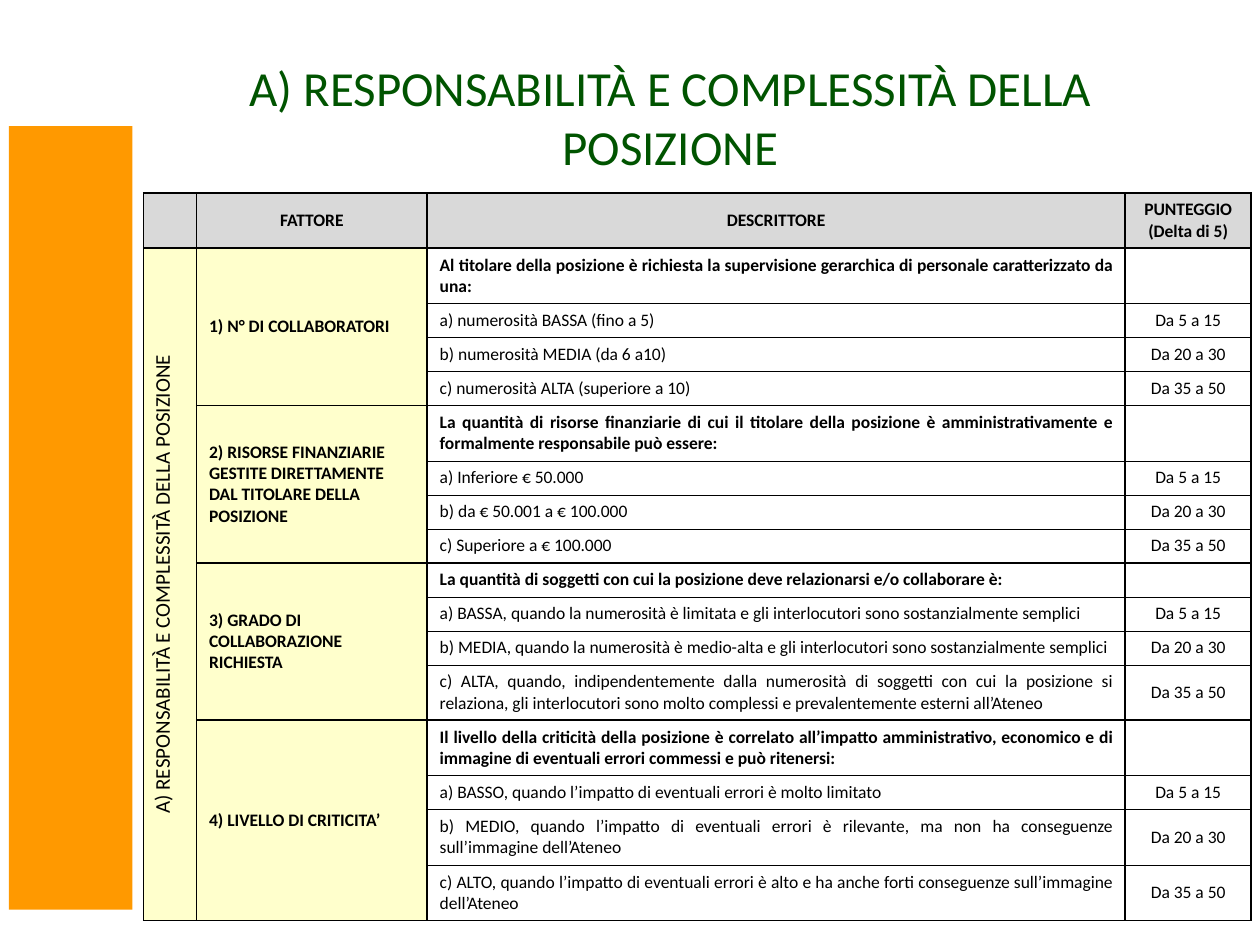
from lxml.etree import SubElement
from pptx import Presentation
from pptx.dml.color import RGBColor
from pptx.enum.shapes import MSO_SHAPE
from pptx.enum.text import MSO_ANCHOR, PP_ALIGN
from pptx.oxml import parse_xml
from pptx.oxml.ns import nsdecls, qn
from pptx.util import Inches, Pt

ORANGE = RGBColor(0xFF, 0x99, 0x00)
GREEN = RGBColor(0x00, 0x54, 0x00)
BLACK = RGBColor(0x00, 0x00, 0x00)
GREY = RGBColor(0xD9, 0xD9, 0xD9)
CREAM = RGBColor(0xFF, 0xFF, 0xCC)

TITLE = "A) RESPONSABILITÀ E COMPLESSITÀ DELLA POSIZIONE"
HEADS = ["", "FATTORE", "DESCRITTORE", "PUNTEGGIO\n(Delta di 5)"]
SCORES = ["", "Da 5 a 15", "Da 20 a 30", "Da 35 a 50"]
# Each factor: name, then its question and three levels
FACTORS = [
    ("1) N° DI COLLABORATORI", [
        "Al titolare della posizione è richiesta la supervisione gerarchica "
        "di personale caratterizzato da una:",
        "a) numerosità BASSA (fino a 5)",
        "b) numerosità MEDIA (da 6 a10)",
        "c) numerosità ALTA (superiore a 10)"]),
    ("2) RISORSE FINANZIARIE GESTITE DIRETTAMENTE DAL TITOLARE DELLA POSIZIONE", [
        "La quantità di risorse finanziarie di cui il titolare della posizione "
        "è amministrativamente e formalmente responsabile può essere:",
        "a) Inferiore € 50.000",
        "b) da € 50.001 a € 100.000",
        "c) Superiore a € 100.000"]),
    ("3) GRADO DI COLLABORAZIONE RICHIESTA", [
        "La quantità di soggetti con cui la posizione deve relazionarsi "
        "e/o collaborare è:",
        "a) BASSA, quando la numerosità è limitata e gli interlocutori sono "
        "sostanzialmente semplici",
        "b) MEDIA, quando la numerosità è medio-alta e gli interlocutori sono "
        "sostanzialmente semplici",
        "c) ALTA, quando, indipendentemente dalla numerosità di soggetti con cui "
        "la posizione si relaziona, gli interlocutori sono molto complessi e "
        "prevalentemente esterni all’Ateneo"]),
    ("4) LIVELLO DI CRITICITA’", [
        "Il livello della criticità della posizione è correlato all’impatto "
        "amministrativo, economico e di immagine di eventuali errori commessi "
        "e può ritenersi:",
        "a) BASSO, quando l’impatto di eventuali errori è molto limitato",
        "b) MEDIO, quando l’impatto di eventuali errori è rilevante, ma non ha "
        "conseguenze sull’immagine dell’Ateneo",
        "c) ALTO, quando l’impatto di eventuali errori è alto e ha anche forti "
        "conseguenze sull’immagine dell’Ateneo"]),
]
WIDTHS = [0.42, 1.83, 5.54, 1]
LOW, HIGH = 0.27, 0.44  # rows of one and of two lines
ONE_LINE = 94  # most letters that fit one line of a description


class Deck:
    font = "Calibri"

    def __init__(self, slide):
        self.slide = slide

    def text(self, frame, text, size, color=BLACK, bold=False, align=PP_ALIGN.LEFT):
        frame.text = text
        for par in frame.paragraphs:
            par.alignment = align
            for run in par.runs:
                font = run.font
                font.name, font.size, font.bold = self.font, Pt(size), bold
                font.color.rgb = color
            if not par.runs:  # keeps empty cells from growing
                SubElement(par._p, qn("a:endParaRPr"), sz=str(size * 100))

    def bar(self, x, y, w, h, color):
        shape = self.slide.shapes.add_shape(
            MSO_SHAPE.RECTANGLE, Inches(x), Inches(y), Inches(w), Inches(h))
        shape.shadow.inherit = False
        shape.fill.solid()
        shape.fill.fore_color.rgb = color
        shape.line.fill.background()

    def title(self, x, y, w, h, text):
        box = self.slide.shapes.add_textbox(Inches(x), Inches(y), Inches(w), Inches(h))
        frame = box.text_frame
        frame.word_wrap = True
        frame.vertical_anchor = MSO_ANCHOR.MIDDLE
        self.text(frame, text, 28, GREEN, align=PP_ALIGN.CENTER)

    def table(self, x, y, widths, heights):
        frame = self.slide.shapes.add_table(
            len(heights), len(widths), Inches(x), Inches(y),
            Inches(sum(widths)), Inches(sum(heights)))
        table = frame.table
        table.first_row = table.horz_banding = False
        for col, width in zip(table.columns, widths):
            col.width = Inches(width)
        for row, height in zip(table.rows, heights):
            row.height = Inches(height)
        return table

    def cell(self, cell, text="", size=10, fill=None, top=1, bottom=1, **style):
        cell.vertical_anchor = MSO_ANCHOR.MIDDLE
        self.text(cell.text_frame, text, size, **style)
        if fill is None:
            cell.fill.background()
        else:
            cell.fill.solid()
            cell.fill.fore_color.rgb = fill
        # Borders go ahead of the fill
        props = cell._tc.get_or_add_tcPr()
        for i, (side, width) in enumerate(zip("LRTB", (1, 1, top, bottom))):
            props.insert(i, parse_xml(
                f'<a:ln{side} {nsdecls("a")} w="{Pt(width)}"><a:solidFill>'
                f'<a:srgbClr val="{BLACK}"/></a:solidFill></a:ln{side}>'))


def main():
    prs = Presentation()
    prs.slide_width, prs.slide_height = Inches(10), Inches(7.5)
    deck = Deck(prs.slides.add_slide(prs.slide_layouts[6]))

    # Side bar and title
    deck.bar(0.07, 1, 0.98, 6.22, ORANGE)
    deck.title(1.14, 0.3, 8.36, 1.25, TITLE)

    # Table grid
    lines = [line for _, group in FACTORS for line in group]
    heights = [HIGH] + [HIGH if len(line) > ONE_LINE else LOW for line in lines]
    table = deck.table(1.14, 1.53, WIDTHS, heights)

    # Header row
    for col, head in enumerate(HEADS):
        deck.cell(table.cell(0, col), head, fill=GREY, bold=True, align=PP_ALIGN.CENTER)

    # Factors, descriptions and scores
    for i, (name, group) in enumerate(FACTORS):
        start = 1 + i * len(group)
        last = len(group) - 1
        for j, (line, score) in enumerate(zip(group, SCORES)):
            row = start + j
            edge = {"top": 1 if j == 0 else 0.25, "bottom": 1 if j == last else 0.25}
            side = TITLE if row == 1 else ""
            deck.cell(table.cell(row, 0), side, 12, CREAM, align=PP_ALIGN.CENTER)
            deck.cell(table.cell(row, 1), name if j == 0 else "", fill=CREAM, bold=True)
            deck.cell(table.cell(row, 2), line, bold=j == 0,
                      align=PP_ALIGN.JUSTIFY, **edge)
            deck.cell(table.cell(row, 3), score, align=PP_ALIGN.CENTER, **edge)
        table.cell(start, 1).merge(table.cell(start + last, 1))

    # Upright label along the left column
    label = table.cell(1, 0)
    label.merge(table.cell(len(lines), 0))
    label._tc.get_or_add_tcPr().set("vert", "vert270")

    prs.save("out.pptx")


if __name__ == "__main__":
    main()
